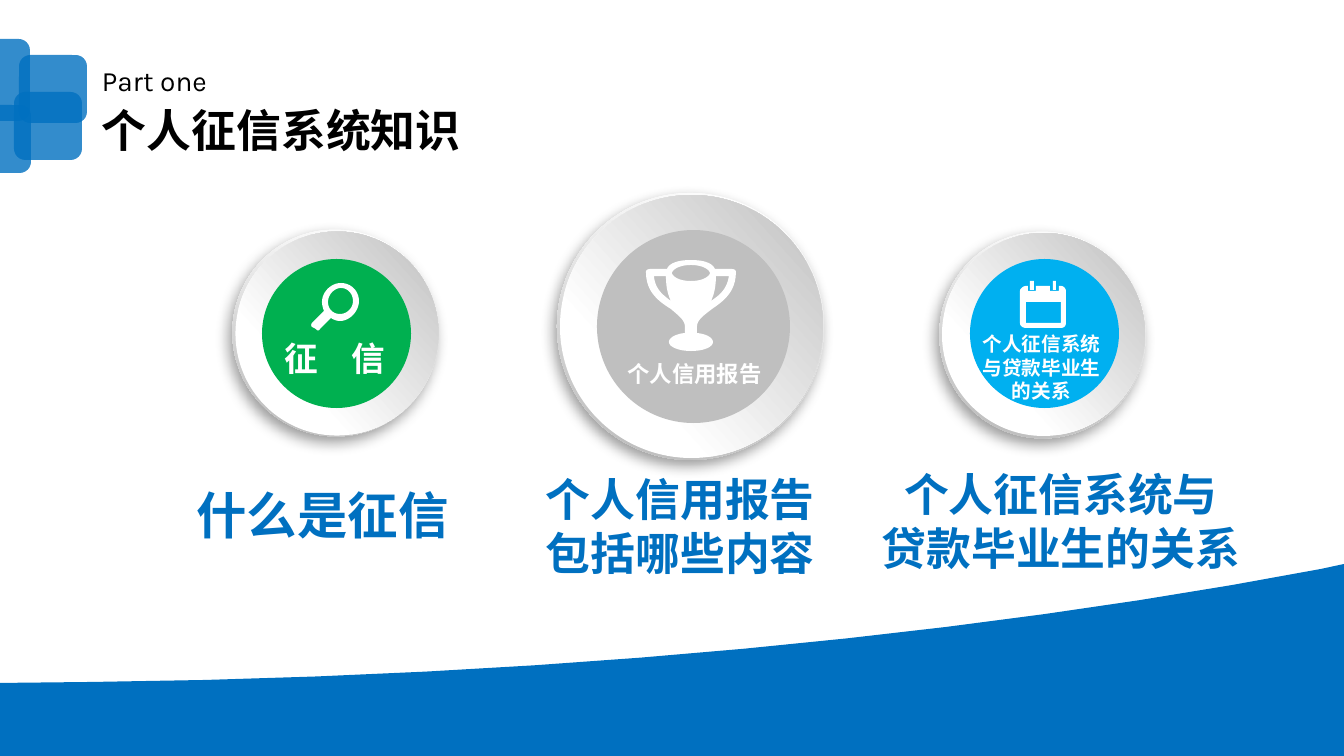
from dataclasses import dataclass

from lxml import etree
from pptx import Presentation
from pptx.dml.color import RGBColor
from pptx.enum.shapes import MSO_SHAPE
from pptx.enum.text import MSO_ANCHOR, PP_ALIGN
from pptx.oxml.ns import qn
from pptx.util import Pt

OVAL, ROUND_RECT = MSO_SHAPE.OVAL, MSO_SHAPE.ROUNDED_RECTANGLE
TOP, MIDDLE = MSO_ANCHOR.TOP, MSO_ANCHOR.MIDDLE
LEFT, CENTER = PP_ALIGN.LEFT, PP_ALIGN.CENTER

EMU_PER_PX = 914400 / 100.8
CURVE_STEPS = 12
FONT = "Karla"
BLUE, BLACK, WHITE = "0070C0", "000000", "FFFFFF"

Box = tuple[int, int, int, int]
Contour = list[tuple[int, ...]]


@dataclass
class Label:
    text: str
    box: Box
    size: int
    color: str
    bold: bool = True
    align: PP_ALIGN = CENTER
    anchor: MSO_ANCHOR = TOP
    inset: tuple[int, int] = (10, 5)
    heading: bool = False


@dataclass
class Badge:
    rim: Box
    face: Box
    disc: Box
    color: str
    icon: list[Contour]
    label: Label


WAVE: list[Contour] = [[
    (1344, 564), (1344, 756), (0, 756), (0, 683), (92, 682),
    (546, 677, 968, 636, 1321, 569),
]]

MAGNIFIER: list[Contour] = [
    [(312, 327), (316, 329), (317, 331, 319, 331, 320, 329), (331, 318),
     (334, 320, 337, 321, 340, 321), (350, 321, 359, 311, 359, 301),
     (359, 291, 351, 283, 341, 283), (331, 283, 322, 292, 322, 302),
     (322, 305, 323, 308, 324, 311), (312, 323), (311, 324, 311, 326, 312, 327)],
    [(340, 314), (333, 314, 328, 309, 328, 302), (328, 295, 334, 288, 341, 288),
     (348, 288, 353, 294, 353, 301), (353, 308, 347, 314, 340, 314)],
]

TROPHY: list[Contour] = [
    [(697, 327), (697, 320, 703, 316, 712, 309), (722, 302, 736, 293, 736, 272),
     (736, 270, 734, 269, 732, 269), (715, 269), (713, 264, 706, 260, 691, 260),
     (676, 260, 669, 264, 667, 269), (650, 269), (648, 269, 646, 270, 646, 272),
     (646, 293, 660, 302, 671, 309), (679, 316, 685, 320, 685, 327), (685, 333),
     (675, 334, 669, 338, 669, 342), (669, 347, 679, 351, 691, 351),
     (704, 351, 713, 347, 713, 342), (713, 338, 707, 334, 697, 333)],
    [(711, 301), (714, 295, 716, 287, 716, 276), (729, 276),
     (727, 289, 720, 295, 711, 301)],
    [(691, 265), (705, 265, 710, 271, 710, 273), (710, 275, 705, 281, 691, 281),
     (677, 281, 672, 275, 672, 273), (672, 271, 677, 265, 691, 265)],
    [(654, 276), (666, 276), (666, 287, 668, 295, 671, 301),
     (663, 295, 655, 289, 654, 276)],
]

CALENDAR: list[Contour] = [
    [(1061, 286), (1059, 286), (1059, 291), (1050, 291), (1050, 286), (1036, 286),
     (1036, 291), (1028, 291), (1028, 286), (1026, 286),
     (1023, 286, 1020, 289, 1020, 291), (1020, 323),
     (1020, 326, 1023, 328, 1026, 328), (1061, 328),
     (1064, 328, 1066, 326, 1066, 323), (1066, 291),
     (1066, 289, 1064, 286, 1061, 286)],
    [(1061, 323), (1026, 323), (1026, 302), (1061, 302)],
    [(1034, 281), (1030, 281), (1030, 290), (1034, 290)],
    [(1056, 281), (1053, 281), (1053, 290), (1056, 290)],
]

LOGO_TILES: list[Box] = [
    (-38, 39, 68, 82), (19, 55, 68, 68), (14, 92, 68, 68), (-37, 105, 68, 68),
]

LABELS = [
    Label("个人征信系统知识", (92, 104, 491, 108), 32, BLACK, align=LEFT, heading=True),
    Label("Part one", (92, 62, 328, 40), 20, BLACK, False, LEFT, heading=True),
    Label("什么是征信", (169, 477, 307, 75), 36, BLUE, anchor=MIDDLE, inset=(13, 7)),
    Label("个人信用报告\n包括哪些内容", (501, 465, 359, 122), 32, BLUE,
          anchor=MIDDLE, inset=(13, 7)),
    Label("个人征信系统与\n贷款毕业生的关系", (827, 460, 468, 122), 32, BLUE,
          anchor=MIDDLE, inset=(13, 7)),
]

BADGES = [
    Badge((232, 230, 207, 206), (235, 232, 204, 203), (262, 259, 149, 149),
          "00B050", MAGNIFIER, Label("征　信", (261, 333, 148, 50), 24, WHITE)),
    Badge((557, 193, 267, 267), (560, 195, 263, 263), (597, 230, 193, 193),
          "BFBFBF", TROPHY, Label("个人信用报告", (615, 355, 159, 37), 16, WHITE)),
    Badge((939, 232, 207, 206), (942, 233, 203, 203), (970, 259, 149, 149),
          "00B0F0", CALENDAR,
          Label("个人征信系统与贷款毕业生的关系", (970, 327, 143, 82), 14, WHITE)),
]


def emu(px: float) -> int:
    return round(px * EMU_PER_PX)


def rgb(color: str) -> RGBColor:
    return RGBColor.from_string(color)


def flatten(contour: Contour) -> list[tuple[int, int]]:
    """Turn lines and cubic curves into a list of points in EMU."""
    points = [contour[0]]
    for seg in contour[1:]:
        if len(seg) == 2:
            points.append(seg)
            continue
        x0, y0 = points[-1]
        x1, y1, x2, y2, x3, y3 = seg
        for i in range(1, CURVE_STEPS + 1):
            t = i / CURVE_STEPS
            a, b, c, d = (1 - t) ** 3, 3 * t * (1 - t) ** 2, 3 * t * t * (1 - t), t ** 3
            points.append((a * x0 + b * x1 + c * x2 + d * x3,
                           a * y0 + b * y1 + c * y2 + d * y3))
    return [(emu(x), emu(y)) for x, y in points]


def paint(sp, color: str) -> None:
    sp.shadow.inherit = False
    sp.line.fill.background()
    sp.fill.solid()
    sp.fill.fore_color.rgb = rgb(color)


def add_outline(slide, contours: list[Contour], color: str) -> None:
    first, *others = [flatten(c) for c in contours]
    builder = slide.shapes.build_freeform(*first[0], scale=1.0)
    builder.add_line_segments(first[1:], close=True)
    for points in others:
        builder.move_to(*points[0])
        builder.add_line_segments(points[1:], close=True)
    paint(builder.convert_to_shape(), color)


def add_preset(slide, kind: MSO_SHAPE, box: Box, color: str):
    sp = slide.shapes.add_shape(kind, *map(emu, box))
    paint(sp, color)
    return sp


def set_alpha(color_el, percent: int) -> None:
    etree.SubElement(color_el, qn("a:alpha"), val=str(percent * 1000))


def add_ring(slide, box: Box, rotation: float, stops: list[tuple[float, str]]):
    sp = add_preset(slide, OVAL, box, WHITE)
    sp.rotation = rotation
    sp.fill.gradient()
    sp.fill.gradient_angle = 315
    for stop, (position, color) in zip(sp.fill.gradient_stops, stops):
        stop.position = position
        stop.color.rgb = rgb(color)
    return sp


def add_shadow(sp) -> None:
    effects = sp._element.spPr.find(qn("a:effectLst"))
    shadow = etree.SubElement(
        effects, qn("a:outerShdw"), blurRad=str(Pt(10)), dist=str(Pt(5)),
        dir=str(123 * 60000), algn="ctr", rotWithShape="0")
    set_alpha(etree.SubElement(shadow, qn("a:srgbClr"), val=BLACK), 39)


def add_label(slide, label: Label) -> None:
    tf = slide.shapes.add_textbox(*map(emu, label.box)).text_frame
    tf.word_wrap = True
    tf.vertical_anchor = label.anchor
    tf.margin_left = tf.margin_right = emu(label.inset[0])
    tf.margin_top = tf.margin_bottom = emu(label.inset[1])
    tf.text = label.text
    for p in tf.paragraphs:
        p.alignment = label.align
        if label.heading:
            p.line_spacing = 0.9
            p.space_before = Pt(10)
        for r in p.runs:
            r.font.name = FONT
            r.font.size = Pt(label.size)
            r.font.bold = label.bold
            r.font.color.rgb = rgb(label.color)


def add_badge(slide, badge: Badge) -> None:
    add_shadow(add_ring(slide, badge.rim, 62.3, [(0.17, WHITE), (0.88, "B8B8B8")]))
    add_ring(slide, badge.face, 273, [(0.29, WHITE), (0.98, "BFBFBF")])
    add_preset(slide, OVAL, badge.disc, badge.color)
    add_outline(slide, badge.icon, WHITE)
    add_label(slide, badge.label)


def main() -> None:
    prs = Presentation()
    prs.slide_width, prs.slide_height = emu(1344), emu(756)
    slide = prs.slides.add_slide(prs.slide_layouts[6])
    add_outline(slide, WAVE, BLUE)
    for box in LOGO_TILES:
        sp = add_preset(slide, ROUND_RECT, box, BLUE)
        set_alpha(sp._element.spPr.find(qn("a:solidFill"))[0], 80)
    for label in LABELS:
        add_label(slide, label)
    for badge in BADGES:
        add_badge(slide, badge)
    prs.save("out.pptx")


if __name__ == "__main__":
    main()
